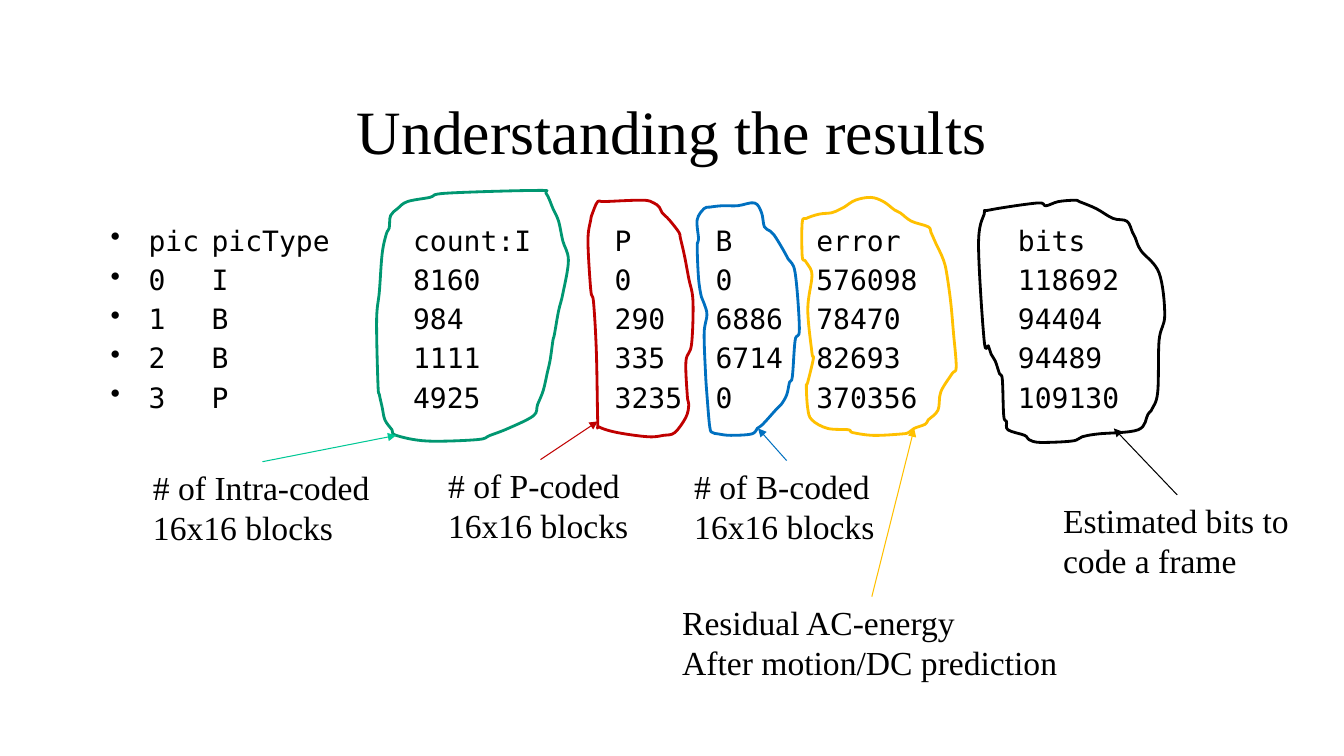
from lxml.etree import SubElement
from pptx import Presentation
from pptx.dml.color import RGBColor
from pptx.enum.shapes import MSO_CONNECTOR
from pptx.enum.text import MSO_ANCHOR, PP_ALIGN
from pptx.oxml.ns import qn
from pptx.util import Pt

SERIF = "Times New Roman"
MONO = "DejaVu Sans Mono"
BLACK = RGBColor(0x00, 0x00, 0x00)
GREEN = RGBColor(0x00, 0x97, 0x71)
MINT = RGBColor(0x00, 0xC8, 0x96)
RED = RGBColor(0xC0, 0x00, 0x00)
BLUE = RGBColor(0x00, 0x70, 0xC0)
AMBER = RGBColor(0xFF, 0xC0, 0x00)

TITLE = "Understanding the results"
RESULT_ROWS = [
    "pic\tpicType\tcount:I\tP\tB\terror\t\tbits",
    "0\tI\t\t8160\t\t0\t0\t576098\t118692",
    "1\tB\t\t984\t\t290\t6886\t78470\t\t94404",
    "2\tB\t\t1111\t\t335\t6714\t82693\t\t94489",
    "3\tP\t\t4925\t\t3235\t0\t370356\t109130",
]
TAB_STEP = 72
BULLET_INDENT = 27

# Points that each hand-drawn loop passes through
INTRA_LOOP = [
    (279, 154), (278, 163), (276, 167), (273, 181), (271, 208), (269, 229),
    (270, 275), (271, 282), (273, 291), (275, 300), (280, 307), (283, 311),
    (305, 315), (341, 314), (350, 311), (363, 306), (381, 297), (384, 289),
    (388, 279), (391, 266), (393, 257), (395, 243), (396, 239), (399, 222),
    (402, 210), (406, 186), (402, 172), (399, 158), (395, 149), (390, 138),
    (384, 136), (319, 138), (307, 141), (291, 144), (284, 149),
]
P_LOOP = [
    (427, 144), (423, 153), (422, 157), (420, 172), (422, 207), (424, 216),
    (426, 251), (427, 301), (428, 305), (441, 309), (463, 312), (474, 311),
    (482, 309), (490, 298), (492, 289), (491, 283), (490, 258), (494, 246),
    (495, 215), (492, 199), (489, 183), (486, 170), (485, 166), (478, 157),
    (473, 152), (471, 148), (467, 145), (459, 143), (432, 144),
]
B_LOOP = [
    (516, 147), (507, 148), (503, 149), (498, 157), (499, 171), (498, 176),
    (499, 199), (501, 212), (503, 217), (505, 225), (503, 238), (504, 267),
    (505, 282), (507, 305), (509, 309), (513, 310), (522, 311), (537, 310),
    (541, 306), (545, 303), (554, 293), (558, 289), (562, 282), (564, 273),
    (566, 269), (568, 243), (571, 235), (568, 195), (563, 185), (558, 176),
    (553, 168), (550, 165), (546, 162), (544, 152), (539, 145), (527, 147),
]
ERROR_LOOP = [
    (594, 152), (585, 153), (576, 156), (573, 159), (573, 183), (575, 186),
    (577, 189), (580, 197), (577, 221), (580, 252), (581, 256), (577, 273),
    (576, 276), (577, 292), (580, 300), (591, 306), (606, 307), (609, 309),
    (624, 311), (644, 310), (649, 309), (653, 306), (661, 303), (663, 300),
    (670, 293), (672, 280), (680, 267), (683, 262), (681, 237), (679, 215),
    (676, 194), (674, 186), (671, 179), (669, 175), (665, 166), (663, 162),
    (651, 158), (643, 152), (639, 150), (631, 144), (622, 141), (611, 143),
    (603, 148), (599, 150),
]
BITS_LOOP = [
    (741, 145), (707, 150), (703, 153), (699, 175), (703, 243), (706, 247),
    (708, 253), (711, 258), (714, 267), (716, 271), (717, 297), (719, 301),
    (720, 307), (732, 311), (735, 314), (743, 316), (766, 315), (773, 312),
    (784, 310), (813, 307), (820, 296), (823, 292), (827, 280), (828, 243),
    (832, 225), (828, 195), (815, 179), (811, 170), (809, 166), (805, 158),
    (795, 156), (783, 149), (771, 144), (768, 143), (756, 144), (747, 147),
]

# loop, loop colour, arrow colour, label lines, label (left, top, width), arrow tip
CALLOUTS = [
    (INTRA_LOOP, GREEN, MINT, ["# of Intra-coded", "16x16 blocks"],
     (102.2, 329.8, 170.6), (283, 311)),
    (P_LOOP, RED, RED, ["# of P-coded", "16x16 blocks"],
     (313, 328.3, 146.2), (427, 301)),
    (B_LOOP, BLUE, BLUE, ["# of B-coded", "16x16 blocks"],
     (488.8, 329, 146.2), (541.5, 306)),
    (ERROR_LOOP, AMBER, AMBER, ["Residual AC-energy", "After motion/DC prediction"],
     (480.2, 426.2, 285.1), (653, 306)),
    (BITS_LOOP, BLACK, BLACK, ["Estimated bits to", "code a frame"],
     (752.3, 353.5, 177.1), (795.6, 306)),
]
LABEL_HEIGHT = 65.5


def format_text(frame, lines, font_name, size):
    frame.text = "\n".join(lines)
    for para in frame.paragraphs:
        for span in para.runs:
            span.font.name = font_name
            span.font.size = Pt(size)
            span.font.color.rgb = BLACK


def bend_segments(loop, corners):
    """Turn the straight segments of a closed loop into smooth Bezier curves."""
    count = len(corners)
    segments = list(loop._element.iter(qn("a:lnTo")))
    for i, segment in enumerate(segments):
        before, start, end, after = (corners[(i + k) % count] for k in (-1, 0, 1, 2))
        leaving = [s + (e - b) / 6 for b, s, e in zip(before, start, end)]
        arriving = [e - (a - s) / 6 for s, e, a in zip(start, end, after)]
        curve = segment.getparent().makeelement(qn("a:cubicBezTo"))
        for x, y in (leaving, arriving, end):
            SubElement(curve, qn("a:pt"), x=str(round(x)), y=str(round(y)))
        segment.getparent().replace(segment, curve)


def add_loop(page, knots, color):
    points = [(Pt(x), Pt(y)) for x, y in knots]
    builder = page.shapes.build_freeform(*points[0])
    builder.add_line_segments(points[1:] + points[:1], close=True)
    loop = builder.convert_to_shape()
    bend_segments(loop, [(x - loop.left, y - loop.top) for x, y in points])
    loop.shadow.inherit = False
    loop.fill.background()
    loop.line.color.rgb = color
    loop.line.width = Pt(2)


def add_label(page, lines, place):
    left, top, width = place
    box = page.shapes.add_textbox(Pt(left), Pt(top), Pt(width), Pt(LABEL_HEIGHT))
    box.text_frame.word_wrap = False
    format_text(box.text_frame, lines, SERIF, 24)
    return box


def add_arrow(page, label, tip, color):
    x, y = (Pt(value) for value in tip)
    arrow = page.shapes.add_connector(MSO_CONNECTOR.STRAIGHT, x, y, x, y)
    arrow.begin_connect(label, 0)
    arrow.line.color.rgb = color
    arrow.line.width = Pt(0.75)
    props = arrow._element.spPr
    SubElement(props.find(qn("a:ln")), qn("a:tailEnd"), type="triangle")
    SubElement(props, qn("a:effectLst"))


def add_results(page):
    box = page.shapes.add_textbox(Pt(72), Pt(156), Pt(816), Pt(324))
    frame = box.text_frame
    frame.word_wrap = True
    format_text(frame, RESULT_ROWS, MONO, 20)
    for para in frame.paragraphs:
        para.space_before = Pt(4)
        props = para._p.get_or_add_pPr()
        props.set("marL", str(Pt(BULLET_INDENT)))
        props.set("indent", str(-Pt(BULLET_INDENT)))
        props.set("defTabSz", str(Pt(TAB_STEP)))
        SubElement(props, qn("a:buChar"), char="•")


def main():
    deck = Presentation()
    deck.slide_width, deck.slide_height = Pt(960), Pt(540)
    page = deck.slides.add_slide(deck.slide_layouts[5])
    title = page.shapes.title
    title.left, title.top, title.width, title.height = Pt(72), Pt(48), Pt(816), Pt(90)
    format_text(title.text_frame, [TITLE], SERIF, 44)
    title.text_frame.vertical_anchor = MSO_ANCHOR.MIDDLE
    title.text_frame.paragraphs[0].alignment = PP_ALIGN.CENTER
    add_results(page)
    for knots, loop_color, arrow_color, lines, place, tip in CALLOUTS:
        add_loop(page, knots, loop_color)
        label = add_label(page, lines, place)
        add_arrow(page, label, tip, arrow_color)
    deck.save("out.pptx")


if __name__ == "__main__":
    main()
